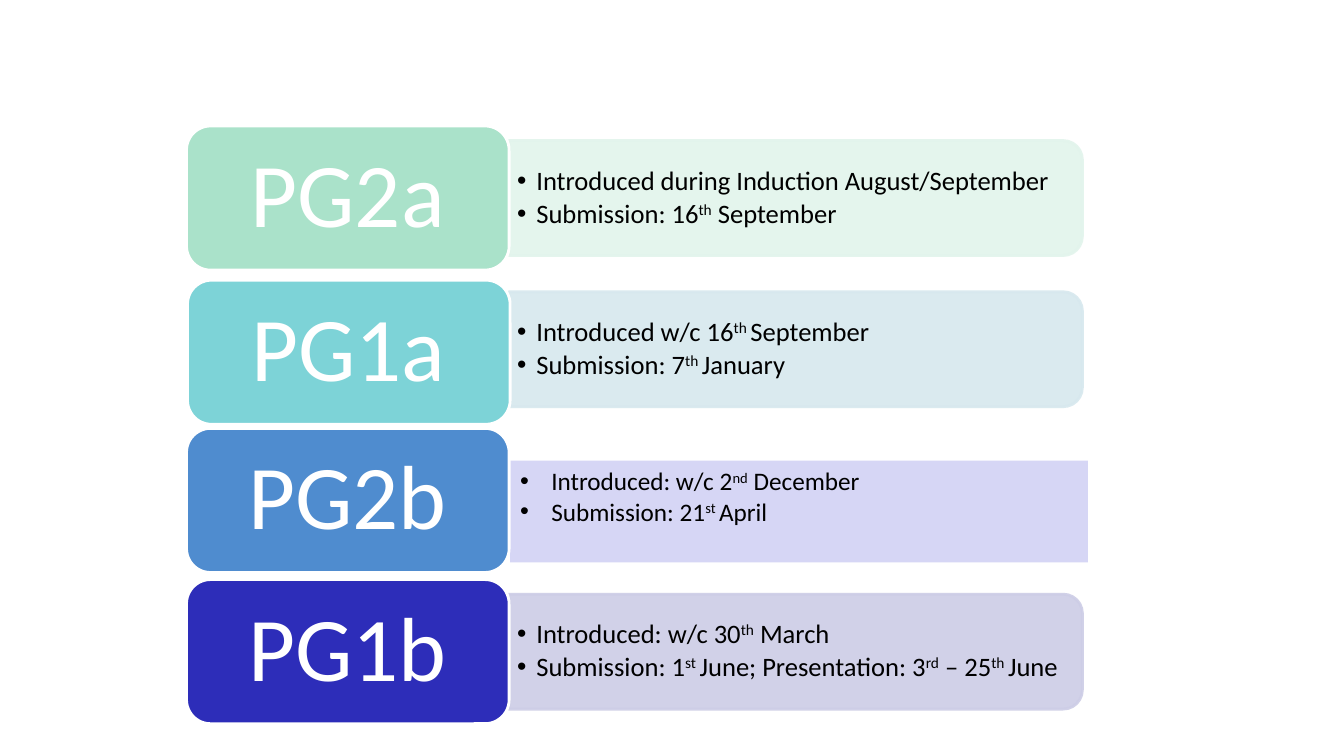
from dataclasses import dataclass

from lxml.etree import SubElement
from pptx import Presentation
from pptx.dml.color import RGBColor
from pptx.enum.shapes import MSO_SHAPE as Preset
from pptx.enum.text import MSO_ANCHOR as Anchor, PP_ALIGN as Align
from pptx.oxml.ns import qn
from pptx.util import Emu, Pt

EMU_PER_PX = 9144


@dataclass(frozen=True)
class Theme:
    font: str = "Calibri"
    ink: str = "000000"
    white: str = "FFFFFF"
    label_size: int = 65
    detail_size: int = 19
    plain_size: int = 18
    outline: int = 2
    panel_alpha: int = 90


@dataclass(frozen=True)
class Box:
    left: int
    top: int
    width: int
    height: int

    def emu(self) -> tuple[Emu, ...]:
        return tuple(px(v) for v in (self.left, self.top, self.width, self.height))


@dataclass(frozen=True)
class Assessment:
    name: str
    colour: str
    panel_colour: str
    details: tuple[str, ...]
    shift_x: int = 0
    shift_y: int = 0
    square_panel: bool = False


THEME = Theme()
ROW_PITCH = 150
ASSESSMENTS = (
    Assessment("PG2a", "AAE2CA", "E2F4EC",
               ("Introduced during Induction August/September",
                "Submission: 16^th^ September")),
    Assessment("PG1a", "7DD3D7", "D7E8EE",
               ("Introduced w/c 16^th ^September", "Submission: 7^th ^January"),
               shift_x=1, shift_y=3),
    Assessment("PG2b", "4F8CCF", "D6D6F5",
               ("Introduced: w/c 2^nd^ December", "Submission: 21^st ^April"),
               square_panel=True),
    Assessment("PG1b", "2D2DB9", "CDCDE6",
               ("Introduced: w/c 30^th^ March",
                "Submission: 1^st ^June; Presentation: 3^rd^ – 25^th ^June")),
)


def px(length: int) -> Emu:
    return Emu(length * EMU_PER_PX)


def add_bullet(paragraph, indent: int) -> None:
    properties = paragraph._p.get_or_add_pPr()
    properties.set("marL", str(px(indent)))
    properties.set("indent", str(-px(indent)))
    SubElement(properties, qn("a:buFont")).set("typeface", "Arial")
    SubElement(properties, qn("a:buChar")).set("char", "•")


def write_text(shape, lines: tuple[str, ...], *, size: int, colour: str,
               align: Align = Align.LEFT, anchor: Anchor = Anchor.MIDDLE,
               inset: tuple[int, int] = (10, 5), indent: int = 0, level: int = 0,
               spacing: float = 1.0, after: int = 0) -> None:
    frame = shape.text_frame
    frame.word_wrap = True
    frame.vertical_anchor = anchor
    frame.margin_left = frame.margin_right = px(inset[0])
    frame.margin_top = frame.margin_bottom = px(inset[1])
    for index, line in enumerate(lines):
        paragraph = frame.add_paragraph() if index else frame.paragraphs[0]
        if indent:
            add_bullet(paragraph, indent)
        paragraph.level = level
        paragraph.alignment = align
        paragraph.line_spacing = spacing
        paragraph.space_after = Pt(after)
        for part, words in enumerate(line.split("^")):
            run = paragraph.add_run()
            run.text = words
            run.font.name = THEME.font
            run.font.size = Pt(size)
            run.font.color.rgb = RGBColor.from_string(colour)
            if part % 2:
                run.font._element.set("baseline", "30000")


def add_block(slide, preset: Preset, box: Box, fill: str, line: str | None = None,
              alpha: int = 100):
    block = slide.shapes.add_shape(preset, *box.emu())
    block.shadow.inherit = False
    block.fill.solid()
    block.fill.fore_color.rgb = RGBColor.from_string(fill)
    if line:
        block.line.color.rgb = RGBColor.from_string(line)
        block.line.width = Pt(THEME.outline)
    else:
        block.line.fill.background()
    if alpha < 100:
        for colour in block._element.spPr.iter(qn("a:srgbClr")):
            SubElement(colour, qn("a:alpha")).set("val", str(alpha * 1000))
    return block


def add_square_panel(slide, item: Assessment, offset: int) -> None:
    panel = add_block(slide, Preset.RECTANGLE, Box(506, 157 + offset, 573, 101),
                      item.panel_colour)
    write_text(panel, item.details, size=THEME.plain_size, colour=THEME.ink,
               anchor=Anchor.TOP, indent=31)


def add_rounded_panel(slide, item: Assessment, offset: int) -> None:
    panel = add_block(slide, Preset.ROUND_2_SAME_RECTANGLE,
                      Box(732, -88 + offset, 114, 569), item.panel_colour,
                      item.panel_colour, THEME.panel_alpha)
    panel.rotation = 90
    details = slide.shapes.add_textbox(*Box(505, 145 + offset, 563, 103).emu())
    write_text(details, item.details, size=THEME.detail_size, colour=THEME.ink,
               inset=(8, 4), indent=19, level=1, spacing=0.9, after=3)


def add_assessment(slide, item: Assessment, row: int) -> None:
    offset = row * ROW_PITCH
    add_panel = add_square_panel if item.square_panel else add_rounded_panel
    add_panel(slide, item, offset)
    label = add_block(slide, Preset.ROUNDED_RECTANGLE,
                      Box(185 + item.shift_x, 125 + offset + item.shift_y, 320, 143),
                      item.colour, THEME.white)
    write_text(label, (item.name,), size=THEME.label_size, colour=THEME.white,
               align=Align.CENTER, inset=(27, 14), spacing=0.9)


def main() -> None:
    deck = Presentation()
    deck.slide_width, deck.slide_height = px(1333), px(750)
    slide = deck.slides.add_slide(deck.slide_layouts[6])
    for row, item in enumerate(ASSESSMENTS):
        add_assessment(slide, item, row)
    deck.save("out.pptx")


if __name__ == "__main__":
    main()
